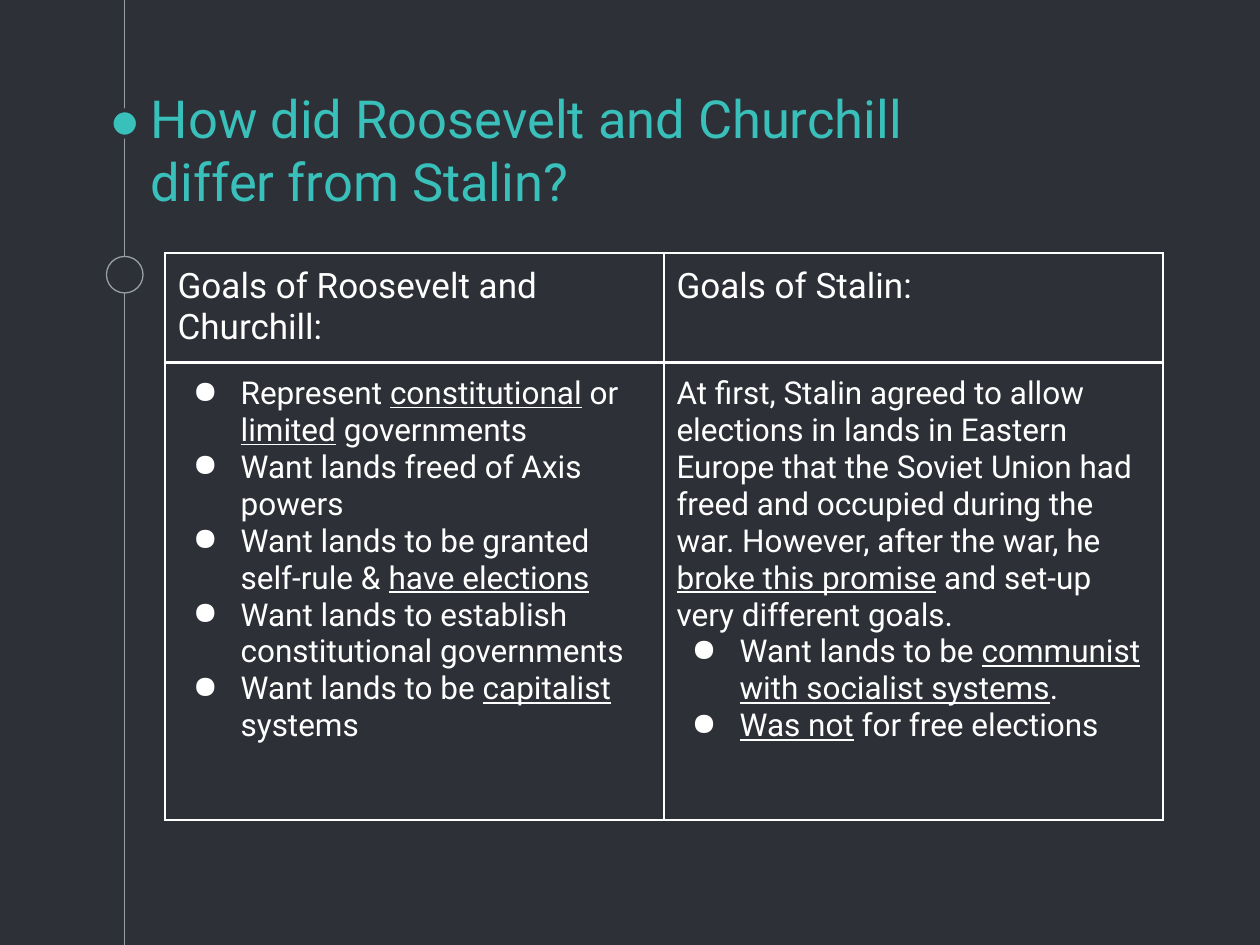
from lxml import etree
from pptx import Presentation, util as u
from pptx.dml.color import RGBColor
from pptx.enum import shapes, text
from pptx.oxml.ns import qn

WIDTH, HEIGHT = 10, 7.5
FONT = "Roboto"
DARK, TEAL, GREY, WHITE = "2E3037", "39C0BA", "999FA9", "FFFFFF"
TIMELINE_X = 0.99
INSET = u.Inches(0.1)

TITLE = ["How did Roosevelt and Churchill", "differ from Stalin?"]
# Underscores enclose underlined words; a leading "* " marks a bullet.
HEADINGS = ["Goals of Roosevelt and Churchill:", "Goals of Stalin:"]
GOALS = [
    ["* Represent _constitutional_ or _limited_ governments",
     "* Want lands freed of Axis powers",
     "* Want lands to be granted self-rule & _have elections_",
     "* Want lands to establish constitutional governments",
     "* Want lands to be _capitalist_ systems"],
    ["At first, Stalin agreed to allow elections in lands in Eastern Europe "
     "that the Soviet Union had freed and occupied during the war. However, "
     "after the war, he _broke this promise_ and set-up very different goals.",
     "* Want lands to be _communist with socialist systems_.",
     "* _Was not_ for free elections"],
]


def color(value):
    return RGBColor.from_string(value)


def set_line(line, value, width):
    line.color.rgb = color(value)
    line.width = u.Pt(width)


def add_timeline(slide):
    x = u.Inches(TIMELINE_X)
    line = slide.shapes.add_connector(
        shapes.MSO_CONNECTOR.STRAIGHT, x, 0, x, u.Inches(HEIGHT))
    set_line(line.line, GREY, 0.75)
    etree.SubElement(line._element.spPr, qn("a:effectLst"))


def add_dot(slide, center_y, diameter, fill, outline, width):
    shape = slide.shapes.add_shape(
        shapes.MSO_SHAPE.OVAL, u.Inches(TIMELINE_X - diameter / 2),
        u.Inches(center_y - diameter / 2), u.Inches(diameter), u.Inches(diameter))
    shape.shadow.inherit = False
    shape.fill.solid()
    shape.fill.fore_color.rgb = color(fill)
    set_line(shape.line, outline, width)


def set_insets(target):
    target.margin_left = target.margin_right = INSET
    target.margin_top = target.margin_bottom = INSET


def add_bullet(paragraph):
    properties = paragraph._p.get_or_add_pPr()
    properties.set("marL", str(u.Inches(0.5)))
    properties.set("indent", str(u.Inches(-0.38)))
    bullet_color = etree.SubElement(properties, qn("a:buClr"))
    etree.SubElement(bullet_color, qn("a:srgbClr"), val=WHITE)
    etree.SubElement(properties, qn("a:buChar"), char="●")


def write(frame, lines, size, value):
    for index, line in enumerate(lines):
        paragraph = frame.add_paragraph() if index else frame.paragraphs[0]
        if line.startswith("* "):
            add_bullet(paragraph)
            line = line[2:]
        for part, words in enumerate(line.split("_")):
            if not words:
                continue
            run = paragraph.add_run()
            run.text = words
            run.font.name = FONT
            run.font.size = u.Pt(size)
            run.font.color.rgb = color(value)
            if part % 2:
                run.font.underline = True


def add_title(slide):
    box = slide.shapes.add_textbox(
        u.Inches(1.1), u.Inches(0.58), u.Inches(10.36), u.Inches(1.21))
    frame = box.text_frame
    frame.word_wrap = True
    frame.vertical_anchor = text.MSO_ANCHOR.MIDDLE
    set_insets(frame)
    write(frame, TITLE, 30, TEAL)


def add_borders(cell):
    properties = cell._tc.get_or_add_tcPr()
    for side in ("lnL", "lnR", "lnT", "lnB"):
        border = etree.SubElement(properties, qn("a:" + side), w=str(u.Pt(1.5)))
        fill = etree.SubElement(border, qn("a:solidFill"))
        etree.SubElement(fill, qn("a:srgbClr"), val=WHITE)


def add_goals_table(slide):
    column_width, row_heights = 3.96, (0.69, 3.63)
    table = slide.shapes.add_table(
        2, 2, u.Inches(1.31), u.Inches(2.01),
        u.Inches(2 * column_width), u.Inches(sum(row_heights))).table
    table.first_row = table.horz_banding = False
    for row, height in zip(table.rows, row_heights):
        row.height = u.Inches(height)
    for column, (heading, goals) in enumerate(zip(HEADINGS, GOALS)):
        for row, (lines, size) in enumerate((([heading], 20), (goals, 18))):
            cell = table.cell(row, column)
            set_insets(cell)
            add_borders(cell)
            cell.fill.background()
            write(cell.text_frame, lines, size, WHITE)


def main():
    presentation = Presentation()
    presentation.slide_width = u.Inches(WIDTH)
    presentation.slide_height = u.Inches(HEIGHT)
    slide = presentation.slides.add_slide(presentation.slide_layouts[6])
    slide.background.fill.solid()
    slide.background.fill.fore_color.rgb = color(DARK)

    # Timeline with its two markers
    add_timeline(slide)
    add_dot(slide, 0.98, 0.21, TEAL, DARK, 2.25)
    add_dot(slide, 2.18, 0.29, DARK, GREY, 0.75)

    # Title and comparison
    add_title(slide)
    add_goals_table(slide)
    presentation.save("out.pptx")


if __name__ == "__main__":
    main()
